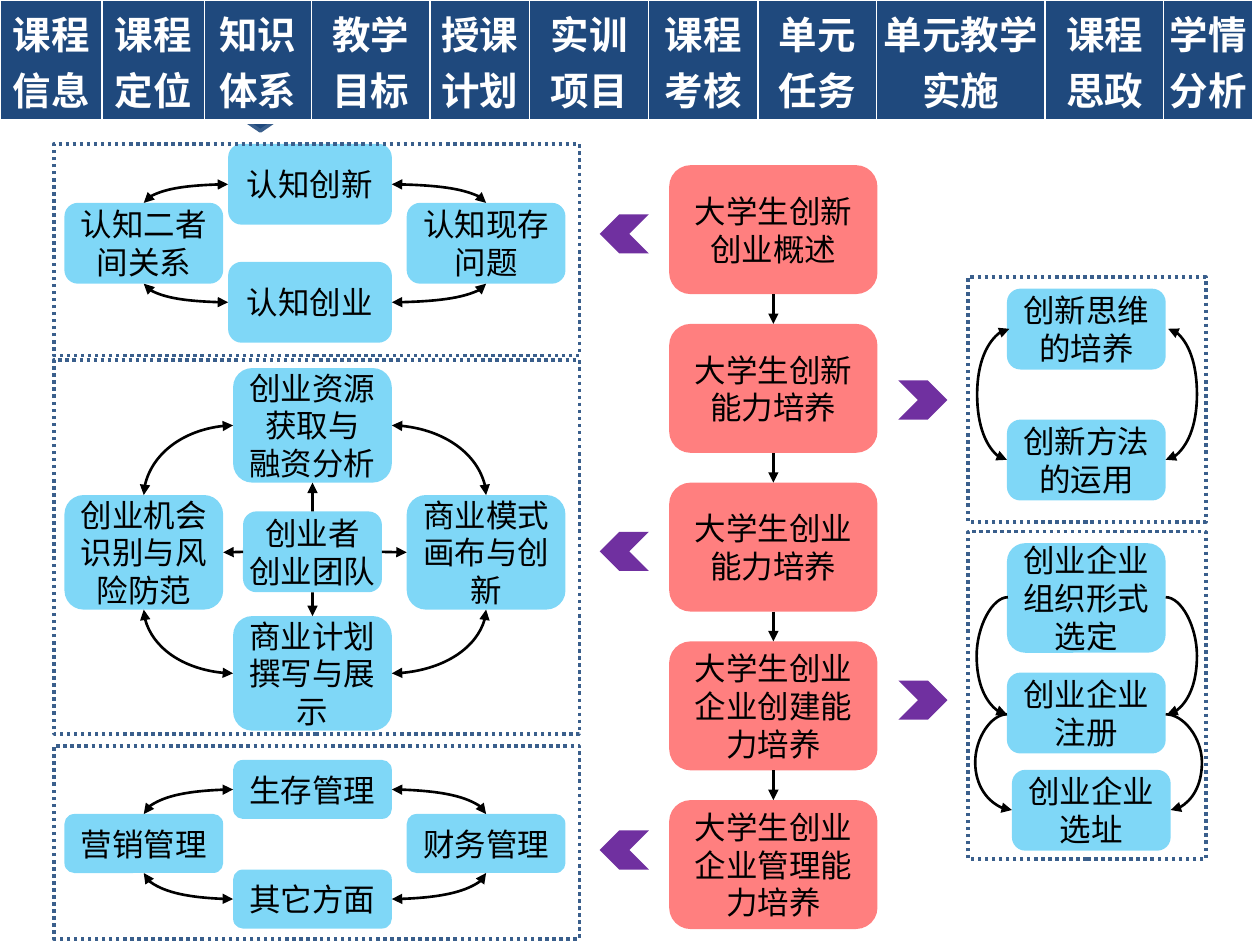
from pptx import Presentation
from pptx.dml.color import RGBColor
from pptx.enum.dml import MSO_LINE
from pptx.enum.shapes import MSO_CONNECTOR as Link, MSO_SHAPE as Shape
from pptx.enum.text import MSO_ANCHOR as Anchor, PP_ALIGN as Align
from pptx.oxml.ns import qn
from pptx.util import Cm, Pt
from lxml.etree import SubElement

THEME = dict(
    navy="1F497D", outline="3A5F8C", unit="FF0000", topic="00B0F0", chevron="7030A0",
    ink="000000", paper="FFFFFF", body_font="Calibri", nav_font="Times New Roman",
    body_size=18, nav_size=22, arrow_width=1.5, frame_width=2,
)

# Content; all lengths in cm, paragraphs separated by "|"
NAV = [
    ("课程|信息", 2.06), ("课程|定位", 2.06), ("知识|体系", 2.16), ("教学|目标", 2.39),
    ("授课|计划", 2.01), ("实训|项目", 2.39), ("课程|考核", 2.21), ("单元|任务", 2.39),
    ("单元教学|实施", 3.4), ("课程思政", 2.39), ("学情分析", 1.8),
]
UNITS = ["大学生创新创业概述", "大学生创新能力培养", "大学生创业能力培养",
         "大学生创业企业创建能力培养", "大学生创业企业管理能力培养"]
RINGS = [  # top, bottom, left, right topics; middle width; box height; tops of the three rows
    dict(topics=("认知创新", "认知创业", "认知二者|间关系", "认知现存问题"),
         middle=(4.6, 3.3), height=1.63, rows=(2.9, 4.09, 5.28)),
    dict(topics=("创业资源获取与|融资分析", "商业计划撰写与展示",
                 "创业机会识别与风险防范", "商业模式|画布与创新"),
         middle=(4.7, 3.2), height=2.31, rows=(7.42, 9.98, 12.42),
         core=("创业者|创业团队", 4.9, 10.31, 2.8, 1.63)),
    dict(topics=("生存管理", "其它方面", "营销管理", "财务管理"),
         middle=(4.7, 3.2), height=1.19, rows=(15.32, 16.41, 17.53)),
]
STEPS = [  # text, left, top, height
    ("创新思维的培养", 20.3, 5.82, 1.63), ("创新方法的运用", 20.3, 8.46, 1.63),
    ("创业企业组织形式选定", 20.3, 10.95, 2.21), ("创业企业注册", 20.3, 13.56, 1.63),
    ("创业企业选址", 20.4, 15.52, 1.63),
]
LOOPS = [  # begin, end, x of the bulge, arrowhead at both ends
    ((20.35, 6.63), (20.3, 9.27), 19.7, True), ((23.5, 9.27), (23.55, 6.63), 24.13, True),
    ((20.32, 12.04), (20.3, 14.4), 19.69, False), ((23.5, 12.04), (23.53, 14.4), 24.13, False),
    ((20.3, 14.4), (20.4, 16.33), 19.66, False), ((23.5, 14.4), (23.6, 16.33), 24.23, False),
]
FRAMES = [(1.09, 2.9, 10.59, 4.27), (1.09, 7.26, 10.59, 7.54), (1.09, 15.04, 10.59, 3.89),
          (19.51, 5.59, 4.8, 4.93), (19.51, 10.72, 4.8, 6.6)]
CHEVRONS = [(12.09, 4.32, 180), (12.09, 10.72, 180), (12.09, 16.74, 180),
            (18.11, 7.67, 0), (18.11, 13.72, 0)]
TOPIC_WIDTH, LEFT_X, RIGHT_X = 3.2, 1.3, 8.2
UNIT_X, UNIT_TOP, UNIT_PITCH, UNIT_WIDTH, UNIT_HEIGHT = 13.49, 3.33, 3.2, 4.2, 2.6
TOP, LEFT, BOTTOM, RIGHT = range(4)

deck = Presentation()
deck.slide_width, deck.slide_height = Cm(25.4), Cm(19.05)
slide = deck.slides.add_slide(deck.slide_layouts[6])


def color(part):
    return RGBColor.from_string(THEME[part])


def write(frame, text, font, size, ink, bold=False):
    for i, line in enumerate(text.split("|")):
        para = frame.paragraphs[0] if i == 0 else frame.add_paragraph()
        para.alignment = Align.CENTER
        run = para.add_run()
        run.text = line
        run.font.name, run.font.size, run.font.bold = THEME[font], Pt(THEME[size]), bold
        run.font.color.rgb = color(ink)


def add_shape(kind, x, y, w, h, fill=None, line=None):
    shape = slide.shapes.add_shape(kind, Cm(x), Cm(y), Cm(w), Cm(h))
    shape.shadow.inherit = False
    if fill:
        shape.fill.solid()
        shape.fill.fore_color.rgb = color(fill)
    else:
        shape.fill.background()
    if line:
        shape.line.color.rgb = color(line)
        shape.line.width = Pt(THEME["frame_width"])
    else:
        shape.line.fill.background()
    return shape


def add_box(text, x, y, w, h, fill="topic", inset=0.0):
    box = add_shape(Shape.ROUNDED_RECTANGLE, x, y, w, h, fill)
    tint = box.fill._xPr.find(qn("a:solidFill"))[0]
    SubElement(tint, qn("a:alpha")).set("val", "50000")
    frame = box.text_frame
    frame.word_wrap, frame.vertical_anchor = True, Anchor.MIDDLE
    frame.margin_left = frame.margin_right = Cm(inset)
    frame.margin_top = frame.margin_bottom = Cm(inset / 2)
    write(frame, text, "body_font", "body_size", "ink")
    return box


def add_arrow(kind, begin, end, both=False):
    arrow = slide.shapes.add_connector(kind, *(Cm(v) for v in (*begin, *end)))
    arrow.line.color.rgb = color("ink")
    arrow.line.width = Pt(THEME["arrow_width"])
    for tag in ("a:headEnd", "a:tailEnd") if both else ("a:tailEnd",):
        SubElement(arrow.line._get_or_add_ln(), qn(tag)).set("type", "triangle")
    SubElement(arrow._element.spPr, qn("a:effectLst"))
    return arrow


def join(source, side, target, target_side):
    arrow = add_arrow(Link.STRAIGHT, (0, 0), (1, 1))
    arrow.begin_connect(source, side)
    arrow.end_connect(target, target_side)


def add_quarter(begin, end):
    arrow = add_arrow(Link.CURVE, begin, end, both=True)
    arrow._element.spPr.find(qn("a:prstGeom")).set("prst", "curvedConnector2")


def add_loop(begin, end, bulge_x, both):
    geometry = add_arrow(Link.CURVE, begin, end, both)._element.spPr.find(qn("a:prstGeom"))
    guides = geometry.find(qn("a:avLst"))
    if guides is None:
        guides = SubElement(geometry, qn("a:avLst"))
    ratio = (bulge_x - begin[0]) / (end[0] - begin[0])
    guide = SubElement(guides, qn("a:gd"))
    guide.set("name", "adj1")
    guide.set("fmla", f"val {round(ratio * 100000)}")


# Chain of course units
units = [add_box(text, UNIT_X, UNIT_TOP + i * UNIT_PITCH, UNIT_WIDTH, UNIT_HEIGHT, "unit", 0.25)
         for i, text in enumerate(UNITS)]
for upper, lower in zip(units, units[1:]):
    join(upper, BOTTOM, lower, TOP)

# Rings of topics on the left
for ring in RINGS:
    mid_x, mid_w = ring["middle"]
    height = ring["height"]
    top_y, side_y, bottom_y = ring["rows"]
    spots = [(mid_x, top_y, mid_w), (mid_x, bottom_y, mid_w),
             (LEFT_X, side_y, TOPIC_WIDTH), (RIGHT_X, side_y, TOPIC_WIDTH)]
    top, bottom, left, right = [add_box(text, x, y, w, height)
                                for text, (x, y, w) in zip(ring["topics"], spots)]
    for edge, side_x in ((mid_x, LEFT_X), (mid_x + mid_w, RIGHT_X)):
        for row_y, side_edge in ((top_y, side_y), (bottom_y, side_y + height)):
            add_quarter((edge, row_y + height / 2), (side_x + TOPIC_WIDTH / 2, side_edge))
    if "core" in ring:
        core = add_box(*ring["core"])
        for side, target, target_side in ((TOP, top, BOTTOM), (LEFT, left, RIGHT),
                                          (RIGHT, right, LEFT), (BOTTOM, bottom, TOP)):
            join(core, side, target, target_side)

# Step boxes and loops on the right
for text, x, y, h in STEPS:
    add_box(text, x, y, TOPIC_WIDTH, h)
for loop in LOOPS:
    add_loop(*loop)

# Dotted frames and chevrons
for frame_box in FRAMES:
    add_shape(Shape.RECTANGLE, *frame_box, line="outline").line.dash_style = MSO_LINE.ROUND_DOT
for x, y, turn in CHEVRONS:
    add_shape(Shape.CHEVRON, x, y, 0.99, 0.79, "chevron").rotation = turn

# Marker of the current section, then the navigation bar over it
add_shape(Shape.FLOWCHART_MERGE, 4.5, 2.13, 1.5, 0.51, "navy", "outline")
nav = slide.shapes.add_table(1, len(NAV), 0, 0, Cm(sum(w for _, w in NAV)), Cm(2.06)).table
for i, (text, width) in enumerate(NAV):
    nav.columns[i].width = Cm(width)
    cell = nav.cell(0, i)
    cell.margin_left = cell.margin_right = cell.margin_top = cell.margin_bottom = Cm(0.1)
    write(cell.text_frame, text, "nav_font", "nav_size", "paper", bold=True)
    props = cell._tc.get_or_add_tcPr()
    for tag, weight in (("a:lnL", 1), ("a:lnR", 1), ("a:lnT", 1), ("a:lnB", 3)):
        border = SubElement(props, qn(tag), w=str(Pt(weight)))
        SubElement(SubElement(border, qn("a:solidFill")), qn("a:srgbClr"), val=THEME["paper"])
    cell.fill.solid()
    cell.fill.fore_color.rgb = color("navy")

deck.save("out.pptx")
